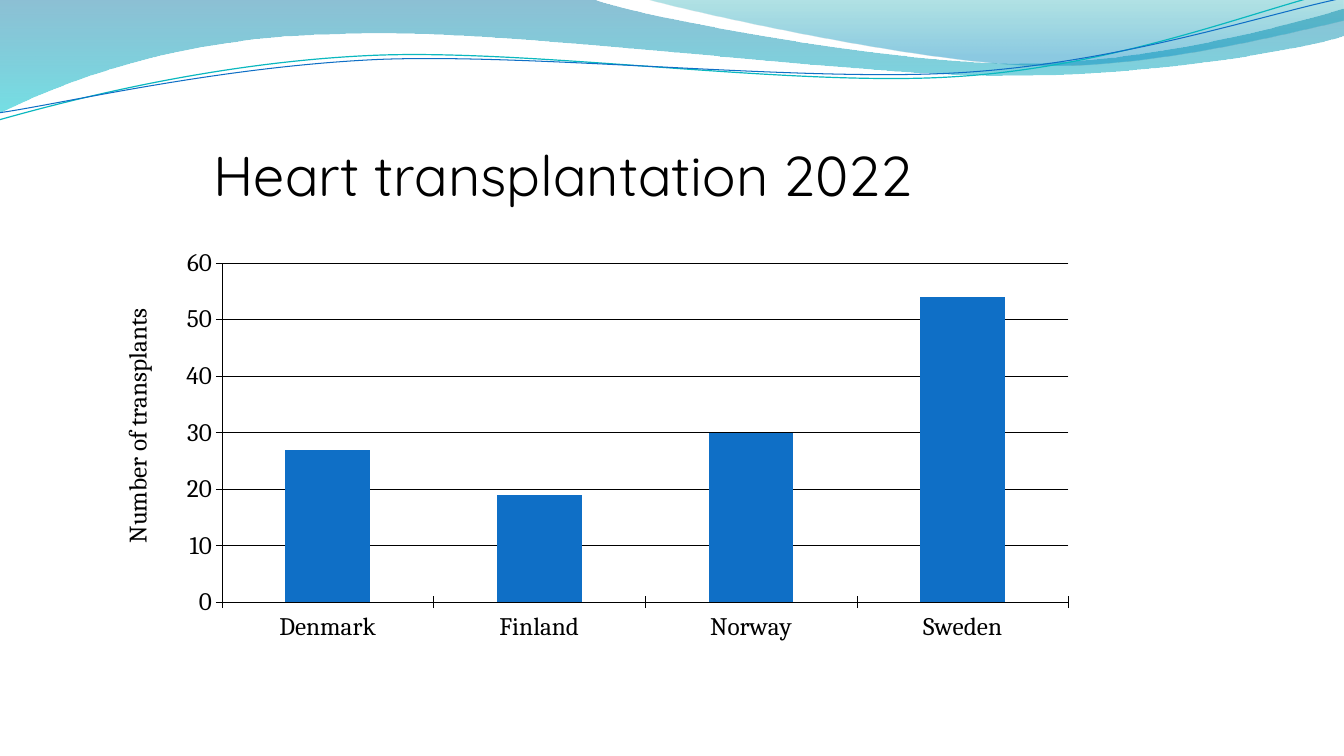
"""Build the heart transplantation slide with its wave header and column chart."""
import math
from dataclasses import dataclass
from typing import Optional

from lxml import etree
from pptx import Presentation
from pptx import util as u
from pptx.chart.data import CategoryChartData
from pptx.dml.color import RGBColor
from pptx.enum import chart as charts, text
from pptx.oxml import parse_xml
from pptx.oxml.ns import nsdecls, qn

CELL = u.Inches(0.1)
COLUMNS, ROWS = 133.33, 75
CHART_WIDTH, CHART_HEIGHT = 102.5, 44.7
BLACK, BLUE, TEAL = "000000", "0F6FC6", "0AB8BF"


@dataclass(frozen=True)
class GradientStop:
    """One stop of a vertical gradient, in percent."""
    position: int
    color: str
    opacity: int


@dataclass(frozen=True)
class Wave:
    """An outline whose segments hold an end point or three Bezier points."""
    start: tuple[float, float]
    segments: tuple[tuple[float, ...], ...]
    gradient: tuple[GradientStop, ...] = ()
    line_color: Optional[str] = None
    line_width: float = 0
    tilt: float = 0
    pivot: tuple[float, float] = (0, 0)


WAVES = (
    Wave((0, 0), (
        (58.7, -0.1),
        (63.4, 1.7, 88.4, 6.3, 101.1, 6.3),
        (113.7, 6.3, 127.7, 2.6, 133.3, 0.9),
        (133.4, 3.6),
        (131.1, 4.4, 115.9, 7.6, 99.4, 7.5),
        (82.9, 7.5, 50.9, 2.8, 34.3, 3.4),
        (17.2, 3.6, 6.1, 8.3, -0.2, 11.3),
        (0, 0),
    ), gradient=(GradientStop(0, "0074A1", 45), GradientStop(100, "00C6CF", 55))),
    Wave((63.8, -0.1), (
        (67.9, 1.1, 90.9, 6.2, 102.5, 6.5),
        (114, 6.9, 128.2, 3.2, 133.3, 2.1),
        (133.3, 0),
        (63.8, -0.1),
    ), gradient=(GradientStop(0, "00A1A9", 30), GradientStop(80, "008BBF", 45))),
    Wave((-0.1, 11.9), (
        (6.3, 10.1, 21, 6.2, 36.9, 5.5),
        (52.7, 4.8, 78.9, 8.7, 94.9, 7.6),
        (111, 6.6, 125.1, 0.8, 133, -1),
    ), line_color=TEAL, line_width=0.85, tilt=-2.7, pivot=(66.5, 5.75)),
    Wave((-0.1, 11.2), (
        (6.2, 10.3, 21.8, 6.6, 37.7, 5.9),
        (53.7, 5.3, 79.6, 8.2, 95.5, 7.2),
        (111.4, 6.2, 125.5, 1.4, 133.3, -0.2),
    ), line_color=BLUE, line_width=0.75, tilt=-2.7, pivot=(66.7, 5.9)),
)


def cells(count: float) -> int:
    """Convert grid cells to a length."""
    return round(count * CELL)


def rgb(color: str) -> RGBColor:
    """Convert a hex string to a colour."""
    return RGBColor.from_string(color)


def format_font(font, *, size: float, name: str, color: str = BLACK) -> None:
    """Set the typeface, size and colour of a font."""
    font.size, font.name, font.bold = u.Pt(size), name, False
    font.color.rgb = rgb(color)


def format_line(line, color: str, width: float) -> None:
    """Set the colour and width of a line."""
    line.color.rgb = rgb(color)
    line.width = u.Pt(width)


def level(wave: Wave, x: float, y: float) -> tuple[int, int]:
    """Turn a point back by the tilt of its wave and convert it to lengths."""
    angle = math.radians(-wave.tilt)
    across, down = x - wave.pivot[0], y - wave.pivot[1]
    return (cells(wave.pivot[0] + across * math.cos(angle) - down * math.sin(angle)),
            cells(wave.pivot[1] + across * math.sin(angle) + down * math.cos(angle)))


def bend(shape, segments: tuple[tuple[float, ...], ...]) -> None:
    """Join each three points of a curved segment into one Bezier curve."""
    lines = iter(list(shape.element.iter(qn("a:lnTo"))))
    for segment in segments:
        line = next(lines)
        if len(segment) == 6:
            line.addprevious(curve := etree.Element(qn("a:cubicBezTo")))
            for control in (line, next(lines), next(lines)):
                curve.append(control[0])
                control.getparent().remove(control)


def fill_gradient(shape, stops: tuple[GradientStop, ...]) -> None:
    """Fill a shape from top to bottom with translucent stops."""
    stop_xml = "".join(
        f'<a:gs pos="{stop.position * 1000}"><a:srgbClr val="{stop.color}">'
        f'<a:alpha val="{stop.opacity * 1000}"/></a:srgbClr></a:gs>' for stop in stops)
    gradient = parse_xml(
        f'<a:gradFill {nsdecls("a")} rotWithShape="1"><a:gsLst>{stop_xml}</a:gsLst>'
        '<a:lin ang="5400000" scaled="0"/></a:gradFill>')
    shape.element.spPr.find(qn("a:custGeom")).addnext(gradient)


def add_wave(slide, wave: Wave) -> None:
    """Draw one wave as a filled area or an open line."""
    builder = slide.shapes.build_freeform(*level(wave, *wave.start))
    points = [level(wave, *segment[i:i + 2])
              for segment in wave.segments for i in range(0, len(segment), 2)]
    builder.add_line_segments(points, close=bool(wave.gradient))
    shape = builder.convert_to_shape()
    bend(shape, wave.segments)
    shape.rotation = wave.tilt
    shape.shadow.inherit = False
    if wave.gradient:
        fill_gradient(shape, wave.gradient)
        shape.line.fill.background()
    else:
        shape.fill.background()
        format_line(shape.line, wave.line_color, wave.line_width)


def add_text(slide, content: str, *, left: float, top: float, width: float, height: float,
             size: float, name: str, spacing: float) -> None:
    """Add a wrapped text box placed on the grid."""
    box = slide.shapes.add_textbox(*map(cells, (left, top, width, height)))
    frame = box.text_frame
    frame.word_wrap = True
    frame.vertical_anchor = text.MSO_ANCHOR.TOP
    paragraph = frame.paragraphs[0]
    paragraph.line_spacing = spacing
    run = paragraph.add_run()
    run.text = content
    format_font(run.font, size=size, name=name)


def set_layout(parent, previous_tag: Optional[str], **lengths: float) -> None:
    """Place a chart part by grid cells within the chart."""
    for old in parent.findall(qn("c:layout")):
        parent.remove(old)
    layout = parse_xml(f'<c:layout {nsdecls("c")}><c:manualLayout/></c:layout>')
    manual = layout[0]
    if "w" in lengths:
        etree.SubElement(manual, qn("c:layoutTarget")).set("val", "inner")
    for key in ("x", "y"):
        etree.SubElement(manual, qn(f"c:{key}Mode")).set("val", "edge")
    for key, length in lengths.items():
        share = length / (CHART_WIDTH if key in "xw" else CHART_HEIGHT)
        etree.SubElement(manual, qn(f"c:{key}")).set("val", f"{share:.4f}")
    if previous_tag:
        parent.find(qn(previous_tag)).addnext(layout)
    else:
        parent.insert(0, layout)


def add_transplant_chart(slide) -> None:
    """Add the column chart of transplants by country."""
    data = CategoryChartData()
    data.categories = ("Denmark", "Finland", "Norway", "Sweden")
    data.add_series("Series 1", (27, 19, 30, 54))
    chart = slide.shapes.add_chart(
        charts.XL_CHART_TYPE.COLUMN_STACKED,
        *map(cells, (9.5, 22.4, CHART_WIDTH, CHART_HEIGHT)), data).chart
    chart.has_legend = chart.has_title = False
    format_font(chart.font, size=18, name="Cambria")
    plot = chart.plots[0]
    plot.gap_width, plot.overlap, plot.vary_by_categories = 150, 100, False
    fill = plot.series[0].format.fill
    fill.solid()
    fill.fore_color.rgb = rgb(BLUE)
    for axis in (chart.category_axis, chart.value_axis):
        axis.major_tick_mark = charts.XL_TICK_MARK.CROSS
        format_font(axis.tick_labels.font, size=18, name="Cambria")
        format_line(axis.format.line, BLACK, 0.25)
    values = chart.value_axis
    values.minimum_scale, values.maximum_scale, values.major_unit = 0, 60, 10
    format_line(values.major_gridlines.format.line, BLACK, 0.25)
    title = values.axis_title
    title.text_frame.text = "Number of transplants"
    format_font(title.text_frame.paragraphs[0].runs[0].font, size=18, name="Cambria")
    next(title.element.iter(qn("a:bodyPr"))).set("rot", "-5400000")
    set_layout(title.element, "c:tx", x=2, y=7.75)
    set_layout(chart.element.chart.plotArea, None, x=12.5, y=3.7, w=84, h=33.65)


def main() -> None:
    """Build and save the presentation."""
    presentation = Presentation()
    presentation.slide_width, presentation.slide_height = cells(COLUMNS), cells(ROWS)
    slide = presentation.slides.add_slide(presentation.slide_layouts[6])
    for wave in WAVES:
        add_wave(slide, wave)
    add_text(slide, "Heart transplantation 2022", left=20.2, top=14.7, width=79.2,
             height=7.7, size=40, name="Quicksand", spacing=0.8)
    add_transplant_chart(slide)
    presentation.save("out.pptx")


if __name__ == "__main__":
    main()
